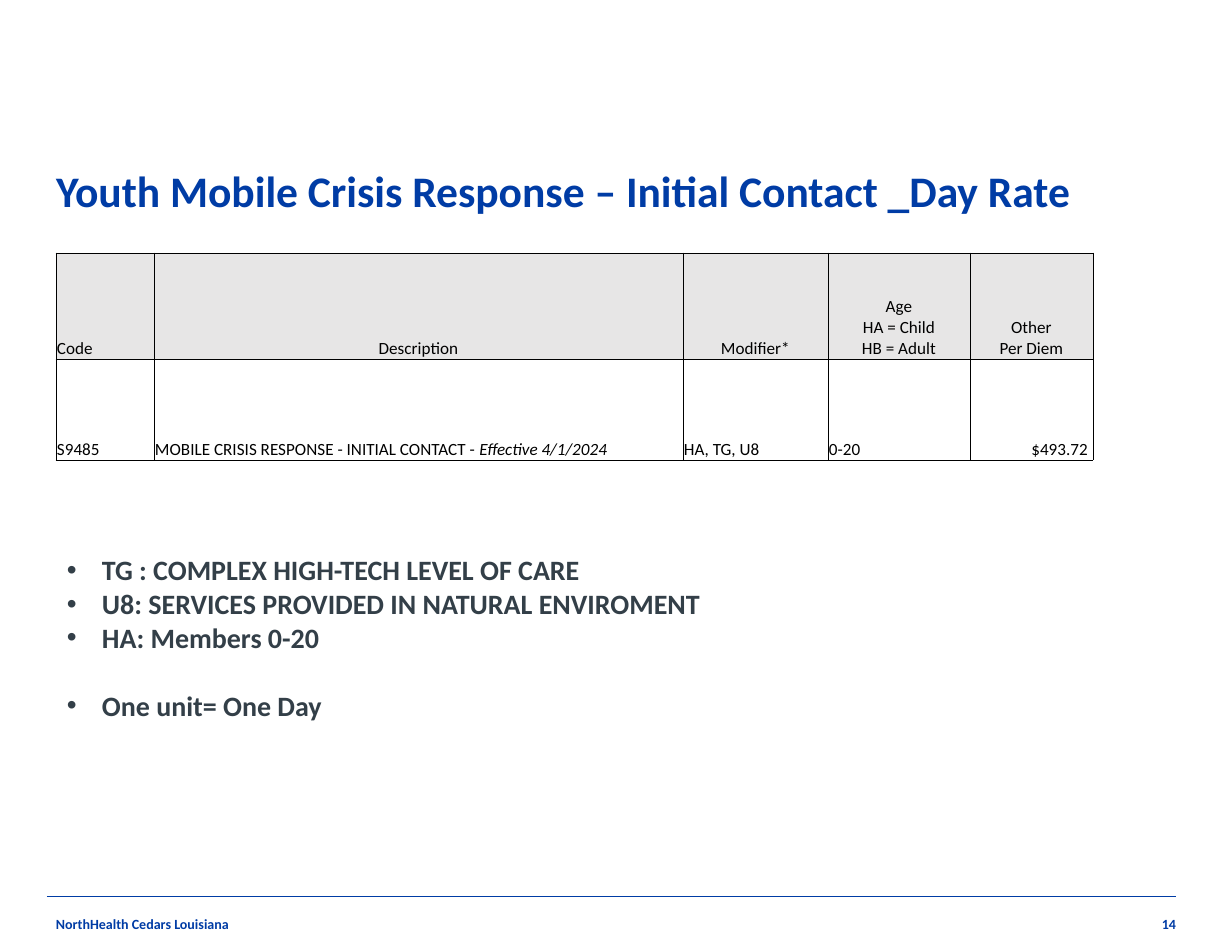
"""Build the youth mobile crisis response day rate slide."""
from lxml.etree import SubElement
from pptx import Presentation
from pptx.dml.color import RGBColor
from pptx.enum.shapes import MSO_CONNECTOR
from pptx.enum.text import MSO_ANCHOR, PP_ALIGN
from pptx.oxml.ns import qn
from pptx.util import Pt

PX = 914400 / 112
BLUE = RGBColor(0x00, 0x3C, 0xA5)
SLATE = RGBColor(0x33, 0x3F, 0x48)
BLACK = RGBColor(0x00, 0x00, 0x00)
GREY = RGBColor(0xE7, 0xE6, 0xE6)
LEFT, CENTER, RIGHT = PP_ALIGN.LEFT, PP_ALIGN.CENTER, PP_ALIGN.RIGHT


def add_run(p, text, size, color, bold=False, italic=False):
    r = p.add_run()
    r.text = text
    r.font.name = "Calibri"
    r.font.size = Pt(size)
    r.font.color.rgb = color
    r.font.bold = bold
    r.font.italic = italic


def add_box(x, y, w, h, anchor, insets=(0, 0, 0, 0)):
    tf = s.shapes.add_textbox(*[round(v * PX) for v in (x, y, w, h)]).text_frame
    tf.word_wrap = True
    tf.vertical_anchor = anchor
    tf.margin_left, tf.margin_top, tf.margin_right, tf.margin_bottom = [
        round(v * PX) for v in insets]
    return tf


prs = Presentation()
prs.slide_width = round(1232 * PX)
prs.slide_height = round(952 * PX)
s = prs.slides.add_slide(prs.slide_layouts[6])

tf = add_box(56, 56, 1066, 178, MSO_ANCHOR.BOTTOM, (0, 0, 0, 17))
p = tf.paragraphs[0]
p.line_spacing = 0.9
add_run(p, "Youth Mobile Crisis Response – Initial Contact _Day Rate", 28, BLUE, True)

for x, w, align, text in [(56, 416, LEFT, "NorthHealth Cedars Louisiana"),
                          (899, 277, RIGHT, "14")]:
    p = add_box(x, 896, w, 56, MSO_ANCHOR.MIDDLE).paragraphs[0]
    p.alignment = align
    add_run(p, text, 9, BLUE, True)

rule = s.shapes.add_connector(
    MSO_CONNECTOR.STRAIGHT, *[round(v * PX) for v in (47, 896, 1176, 896)])
rule.line.color.rgb = BLUE
rule.line.width = Pt(0.5)
SubElement(rule._element.spPr, qn("a:effectLst"))

tf = add_box(56, 547, 1037, 181, MSO_ANCHOR.TOP, (11, 6, 11, 6))
bullets = [
    ("TG : COMPLEX HIGH-TECH LEVEL OF CARE", 0),
    ("U8: SERVICES PROVIDED IN NATURAL ENVIROMENT", 0),
    ("HA: Members 0-20", 0),
    ("One unit= One Day", 22),
]
for i, (text, gap) in enumerate(bullets):
    p = tf.add_paragraph() if i else tf.paragraphs[0]
    p.space_before = Pt(gap)
    pPr = p._p.get_or_add_pPr()
    pPr.set("marL", str(round(35 * PX)))
    pPr.set("indent", str(round(-35 * PX)))
    SubElement(pPr, qn("a:buFont"), typeface="Arial")
    SubElement(pPr, qn("a:buChar"), char="•")
    add_run(p, text, 18, SLATE, True)

cols = [98, 529, 145, 142, 123]
rows = [106, 101]
cells = [
    [(LEFT, ["Code"]), (CENTER, ["Description"]), (CENTER, ["Modifier*"]),
     (CENTER, ["Age", "HA = Child", "HB = Adult"]), (CENTER, ["Other", "Per Diem"])],
    [(LEFT, ["S9485"]), (LEFT, ["MOBILE CRISIS RESPONSE - INITIAL CONTACT -"]),
     (LEFT, ["HA, TG, U8"]), (LEFT, ["0-20"]), (RIGHT, ["$493.72"])],
]
table = s.shapes.add_table(
    len(rows), len(cols),
    *[round(v * PX) for v in (56, 253, sum(cols), sum(rows))]).table
table.first_row = False
table.horz_banding = False
for col, w in zip(table.columns, cols):
    col.width = round(w * PX)
for row, h in zip(table.rows, rows):
    row.height = round(h * PX)

for i, row in enumerate(cells):
    for j, (align, lines) in enumerate(row):
        cell = table.cell(i, j)
        cell.vertical_anchor = MSO_ANCHOR.BOTTOM
        cell.margin_left = cell.margin_top = round(PX)
        cell.margin_right = round((5 if align == RIGHT else 1) * PX)
        cell.margin_bottom = 0
        p = cell.text_frame.paragraphs[0]
        p.alignment = align
        for k, line in enumerate(lines):
            if k:
                p.add_line_break()
            add_run(p, line, 11, BLACK)
        tcPr = cell._tc.get_or_add_tcPr()
        for side in ("lnL", "lnR", "lnT", "lnB"):
            ln = SubElement(tcPr, qn(f"a:{side}"), w=str(Pt(0.5)))
            fill = SubElement(ln, qn("a:solidFill"))
            SubElement(fill, qn("a:srgbClr"), val=str(BLACK))
        if i == 0:
            cell.fill.solid()
            cell.fill.fore_color.rgb = GREY
        else:
            cell.fill.background()
add_run(table.cell(1, 1).text_frame.paragraphs[0], " Effective 4/1/2024", 11, BLACK,
        italic=True)

prs.save("out.pptx")
